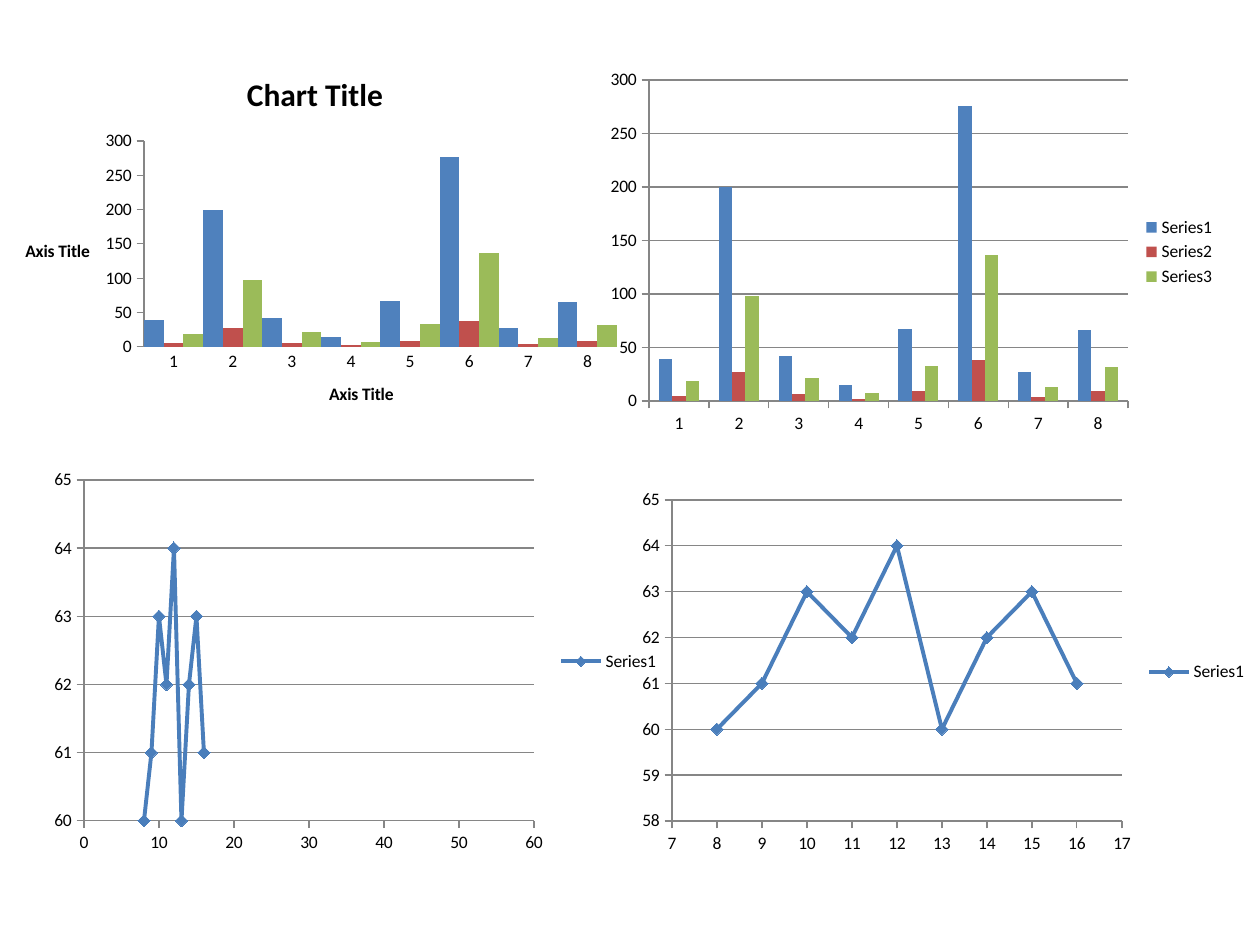
import pptx
import pptx.chart.data
import pptx.dml.color
import pptx.enum.chart
import pptx.oxml
import pptx.oxml.ns
import pptx.util

PX = 914400 / 126
CHART = pptx.enum.chart
NS = pptx.oxml.ns.nsdecls("c")

COUNTS = {
    "Series1": (39, 200, 42, 15, 67, 276, 27, 66),
    "Series2": (5, 27, 6, 2, 9, 38, 4, 9),
    "Series3": (19, 98, 21, 7, 33, 136, 13, 32),
}
HEIGHTS = dict(zip(range(8, 17), (60, 61, 63, 62, 64, 60, 62, 63, 61)))


def emu(px):
    return pptx.util.Emu(round(px * PX))


def rgb(value):
    return pptx.dml.color.RGBColor.from_string(value)


class ChartSlide:
    font = "Calibri"
    text = "000000"
    rule = "868686"
    line = "4A7EBB"
    palette = ("4F81BD", "C0504D", "9BBB59")

    def __init__(self, slide):
        self.s = slide

    def add_chart(self, kind, data, box, plot, legend):
        """Add a styled chart; box and plot are left, top, width, height on the slide."""
        chart = self.s.shapes.add_chart(kind, *map(emu, box), data).chart
        chart.font.name = self.font
        chart.font.size = pptx.util.Pt(10)
        chart.font.color.rgb = rgb(self.text)
        chart.has_title = False
        chart.has_legend = legend
        if legend:
            chart.legend.position = CHART.XL_LEGEND_POSITION.RIGHT
            chart.legend.include_in_layout = False
        self.place_plot(chart, box, plot)
        return chart

    def place_plot(self, chart, box, plot):
        left, top, width, height = box
        parts = {
            "x": (plot[0] - left) / width,
            "y": (plot[1] - top) / height,
            "w": plot[2] / width,
            "h": plot[3] / height,
        }
        sizes = "".join(f'<c:{k} val="{v:.4f}"/>' for k, v in parts.items())
        area = chart._chartSpace.chart.plotArea
        for old in area.xpath("c:layout"):
            area.remove(old)
        area.insert(0, pptx.oxml.parse_xml(
            f'<c:layout {NS}><c:manualLayout><c:layoutTarget val="inner"/>'
            f'<c:xMode val="edge"/><c:yMode val="edge"/>{sizes}'
            "</c:manualLayout></c:layout>"))

    def style_axis(self, axis, scale=None, grid=False, tick="OUTSIDE"):
        """Style an axis; scale is minimum, maximum and major unit."""
        axis.has_major_gridlines = grid
        axis.major_tick_mark = CHART.XL_TICK_MARK[tick]
        axis.minor_tick_mark = CHART.XL_TICK_MARK.NONE
        axis.tick_labels.number_format = "General"
        axis.tick_labels.number_format_is_linked = False
        if scale:
            axis.minimum_scale, axis.maximum_scale, axis.major_unit = scale
        lines = [axis.format.line]
        if grid:
            lines.append(axis.major_gridlines.format.line)
        for line in lines:
            line.color.rgb = rgb(self.rule)
            line.width = pptx.util.Pt(0.75)

    def add_title(self, owner, text, size):
        """Write a bold horizontal title into a chart title or axis title."""
        tf = owner.text_frame
        tf._txBody.bodyPr.set("rot", "0")
        r = tf.paragraphs[0].add_run()
        r.text = text
        r.font.name = self.font
        r.font.size = pptx.util.Pt(size)
        r.font.bold = True
        r.font.color.rgb = rgb(self.text)

    def columns(self, box, plot, gap, grid, legend, tick):
        data = pptx.chart.data.CategoryChartData()
        data.categories = [str(n) for n in range(1, 9)]
        for name, values in COUNTS.items():
            data.add_series(name, values)
        chart = self.add_chart(CHART.XL_CHART_TYPE.COLUMN_CLUSTERED, data, box, plot, legend)
        bars = chart.plots[0]
        bars.gap_width = gap
        bars.overlap = 0
        bars.vary_by_categories = False
        for series, color in zip(bars.series, self.palette):
            series.format.fill.solid()
            series.format.fill.fore_color.rgb = rgb(color)
        self.style_axis(chart.category_axis, tick=tick)
        self.style_axis(chart.value_axis, (0, 300, 50), grid)
        return chart

    def scatter(self, box, plot, x_scale, y_scale):
        data = pptx.chart.data.XyChartData()
        points = data.add_series("Series1")
        for x, y in HEIGHTS.items():
            points.add_data_point(x, y)
        chart = self.add_chart(CHART.XL_CHART_TYPE.XY_SCATTER_LINES, data, box, plot, True)
        chart.plots[0].vary_by_categories = False
        series = chart.plots[0].series[0]
        series.smooth = False
        series.format.line.color.rgb = rgb(self.line)
        series.format.line.width = pptx.util.Pt(2.25)
        series.marker.style = CHART.XL_MARKER_STYLE.DIAMOND
        series.marker.size = 7
        series.marker.format.fill.solid()
        series.marker.format.fill.fore_color.rgb = rgb(self.palette[0])
        series.marker.format.line.color.rgb = rgb(self.line)
        self.style_axis(chart.category_axis, x_scale)
        self.style_axis(chart.value_axis, y_scale, grid=True)


def main():
    prs = pptx.Presentation()
    prs.slide_width, prs.slide_height = emu(1260), emu(945)
    page = ChartSlide(prs.slides.add_slide(prs.slide_layouts[6]))

    titled = page.columns((0, 53, 630, 378), (144, 141, 473, 206),
                          gap=0, grid=False, legend=False, tick="NONE")
    page.add_title(titled.chart_title, "Chart Title", 18)
    for axis in (titled.category_axis, titled.value_axis):
        page.add_title(axis.axis_title, "Axis Title", 10)

    page.scatter((42, 462, 630, 399), (84, 480, 450, 341), (0, 60, 10), (60, 65, 1))
    page.columns((598, 63, 630, 378), (649, 80, 479, 321),
                 gap=150, grid=True, legend=True, tick="OUTSIDE")
    page.scatter((630, 483, 630, 378), (672, 500, 450, 321), (7, 17, 1), (58, 65, 1))
    prs.save("out.pptx")


if __name__ == "__main__":
    main()
